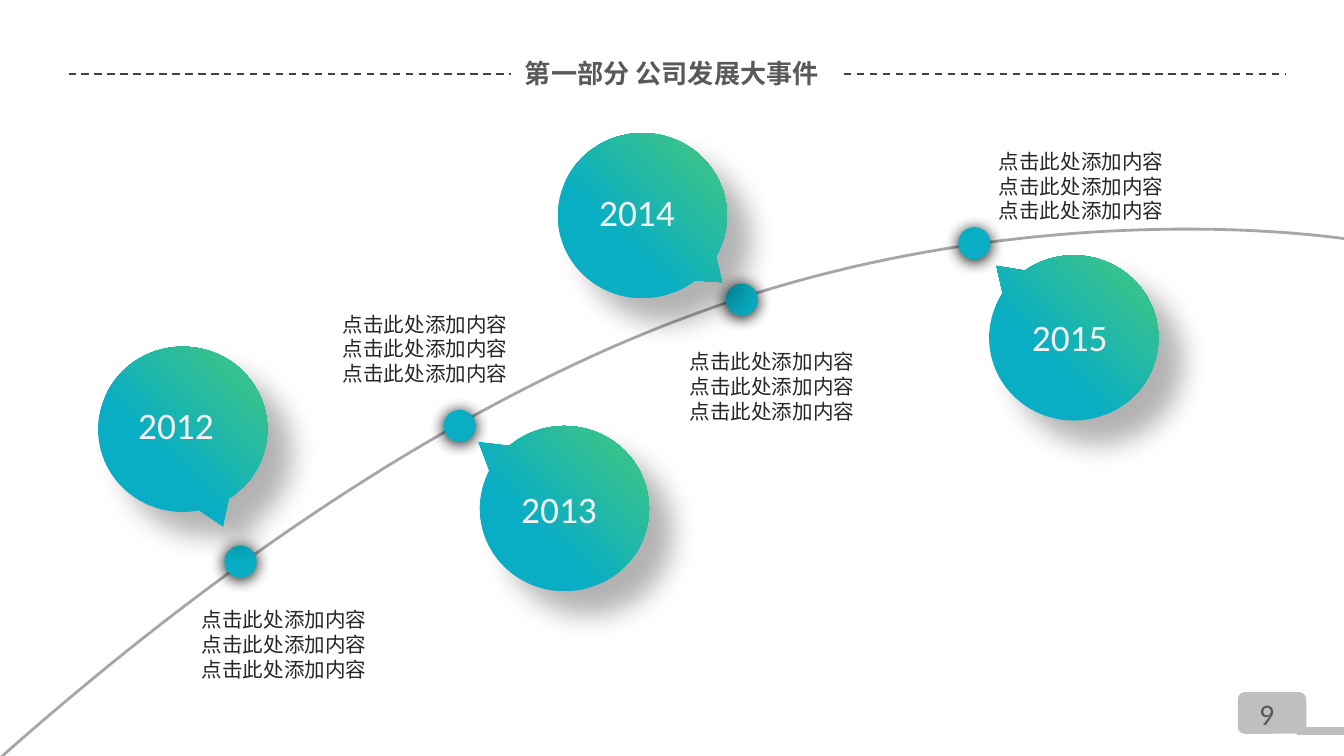
import pptx
import pptx.util
import pptx.dml.color
import pptx.enum.dml
import pptx.enum.shapes
import pptx.enum.text
import pptx.oxml
import pptx.oxml.ns
from lxml import etree

Inches = pptx.util.Inches
Pt = pptx.util.Pt
SHAPE = pptx.enum.shapes.MSO_SHAPE
ALIGN = pptx.enum.text.PP_ALIGN
CJK_FONT = "Noto Sans CJK SC"
CAPTION = ["点击此处添加内容"] * 3

MILESTONES = [
    ("2012", (1.67, 4.06), (0.73, 2.58), (0.239, 0.59), (0.93, 2.94), (1.35, 4.47)),
    ("2013", (3.3, 3.05), (3.57, 3.17), (-0.507, -0.402), (3.78, 3.57), (2.4, 2.27)),
    ("2014", (5.4, 2.11), (4.15, 0.99), (0.471, 0.403), (4.36, 1.36), (4.98, 2.55)),
    ("2015", (7.13, 1.69), (7.36, 1.9), (-0.457, -0.436), (7.58, 2.29), (7.28, 1.06)),
]

GROWTH_CURVE = [
    ((-0.01, 5.65), (1.32, 4.47), (3.17, 3.07), (5.16, 2.34)),
    ((5.16, 2.34), (7.14, 1.61), (9.09, 1.65), (10.03, 1.78)),
]


def rgb(hex_color):
    return pptx.dml.color.RGBColor.from_string(hex_color)


def write(frame, lines, size, color, font="Calibri", bold=False,
          align=ALIGN.LEFT, line_height=None):
    frame.word_wrap = True
    for index, line in enumerate(lines):
        paragraph = frame.add_paragraph() if index else frame.paragraphs[0]
        paragraph.alignment = align
        if line_height:
            paragraph.line_spacing = Pt(line_height)
        run = paragraph.add_run()
        run.text = line
        run.font.name = font
        run.font.size = Pt(size)
        run.font.bold = bold
        run.font.color.rgb = rgb(color)
        east_asian = etree.SubElement(run.font._element, pptx.oxml.ns.qn("a:ea"))
        east_asian.set("typeface", CJK_FONT)


def bezier(points, t):
    weights = ((1 - t) ** 3, 3 * t * (1 - t) ** 2, 3 * t * t * (1 - t), t ** 3)
    return tuple(
        Inches(sum(w * p[axis] for w, p in zip(weights, points)))
        for axis in (0, 1)
    )


class TimelineSlide:
    teal = "09AEC4"
    green = "45C87C"
    gray = "BFBFBF"
    dark_gray = "595959"

    def __init__(self, slide):
        self.slide = slide

    def title(self, text):
        heading = self.slide.shapes.title
        heading.left, heading.top = Inches(0.12), Inches(0.35)
        heading.width, heading.height = Inches(9.76), Inches(0.38)
        frame = heading.text_frame
        frame.auto_size = pptx.enum.text.MSO_AUTO_SIZE.NONE
        frame.vertical_anchor = pptx.enum.text.MSO_ANCHOR.MIDDLE
        write(frame, [text], 14, self.dark_gray, font=CJK_FONT, bold=True,
              align=ALIGN.CENTER)

    def text(self, lines, left, top, width, height, **style):
        box = self.slide.shapes.add_textbox(
            Inches(left), Inches(top), Inches(width), Inches(height))
        write(box.text_frame, lines, **style)

    def shape(self, kind, left, top, width, height, fill):
        shape = self.slide.shapes.add_shape(
            kind, Inches(left), Inches(top), Inches(width), Inches(height))
        shape.shadow.inherit = False
        shape.line.fill.background()
        shape.fill.solid()
        shape.fill.fore_color.rgb = rgb(fill)
        return shape

    def shadow(self, shape, alpha, blur, distance, angle):
        effects = shape._element.spPr.find(pptx.oxml.ns.qn("a:effectLst"))
        effects.append(pptx.oxml.parse_xml(
            f'<a:outerShdw {pptx.oxml.ns.nsdecls("a")} blurRad="{Pt(blur)}" '
            f'dist="{Pt(distance)}" dir="{angle * 60000}" algn="ctr" '
            f'rotWithShape="0"><a:srgbClr val="000000">'
            f'<a:alpha val="{alpha * 1000}"/></a:srgbClr></a:outerShdw>'))

    def marker(self, left, top):
        dot = self.shape(SHAPE.OVAL, left, top, 0.24, 0.24, self.teal)
        self.shadow(dot, alpha=100, blur=8.5, distance=1, angle=90)

    def callout(self, left, top, pointer):
        bubble = self.shape(
            SHAPE.OVAL_CALLOUT, left, top, 1.26, 1.23, self.teal)
        bubble.adjustments[0], bubble.adjustments[1] = pointer
        bubble.fill.gradient()
        bubble.fill.gradient_angle = 45
        stops = ((0.35, self.teal), (1, self.green))
        for stop, (position, color) in zip(bubble.fill.gradient_stops, stops):
            stop.position = position
            stop.color.rgb = rgb(color)
        self.shadow(bubble, alpha=30, blur=15, distance=18, angle=45)

    def dashed_rule(self, left, right, y):
        rule = self.slide.shapes.add_connector(
            pptx.enum.shapes.MSO_CONNECTOR.STRAIGHT,
            Inches(left), Inches(y), Inches(right), Inches(y))
        rule.line.color.rgb = rgb("404040")
        rule.line.width = Pt(1)
        rule.line.dash_style = pptx.enum.dml.MSO_LINE.DASH
        etree.SubElement(rule._element.spPr, pptx.oxml.ns.qn("a:effectLst"))

    def curve(self, segments, steps=40):
        points = [bezier(segment, step / steps)
                  for segment in segments for step in range(1, steps + 1)]
        builder = self.slide.shapes.build_freeform(*bezier(segments[0], 0))
        builder.add_line_segments(points, close=False)
        growth = builder.convert_to_shape()
        growth.shadow.inherit = False
        growth.fill.background()
        growth.line.color.rgb = rgb("A6A6A6")
        growth.line.width = Pt(1.5)

    def page_number(self, number):
        self.shape(SHAPE.ROUNDED_RECTANGLE, 9.21, 5.15, 0.51, 0.31, self.gray)
        self.shape(SHAPE.RECTANGLE, 9.65, 5.41, 0.35, 0.06, self.gray)
        self.text([number], 9.27, 5.13, 0.48, 0.37,
                  size=16, color=self.dark_gray)


def main():
    deck = pptx.Presentation()
    deck.slide_width, deck.slide_height = Inches(10), Inches(5.625)
    page = TimelineSlide(deck.slides.add_slide(deck.slide_layouts[5]))

    page.page_number("9")
    for left in (0.51, 6.28):
        page.dashed_rule(left, left + 3.29, 0.55)
    page.title("第一部分 公司发展大事件")

    page.curve(GROWTH_CURVE)
    for _, dot, *_ in MILESTONES:
        page.marker(*dot)
    for year, _, bubble, pointer, label, caption in MILESTONES:
        page.callout(*bubble, pointer)
        page.text([year], *label, 0.83, 0.44, size=20, color="F2F2F2")
        page.text(CAPTION, *caption, 1.53, 0.66, size=11, color="262626",
                  font="Arial", align=ALIGN.CENTER, line_height=13.2)

    deck.save("out.pptx")


if __name__ == "__main__":
    main()
